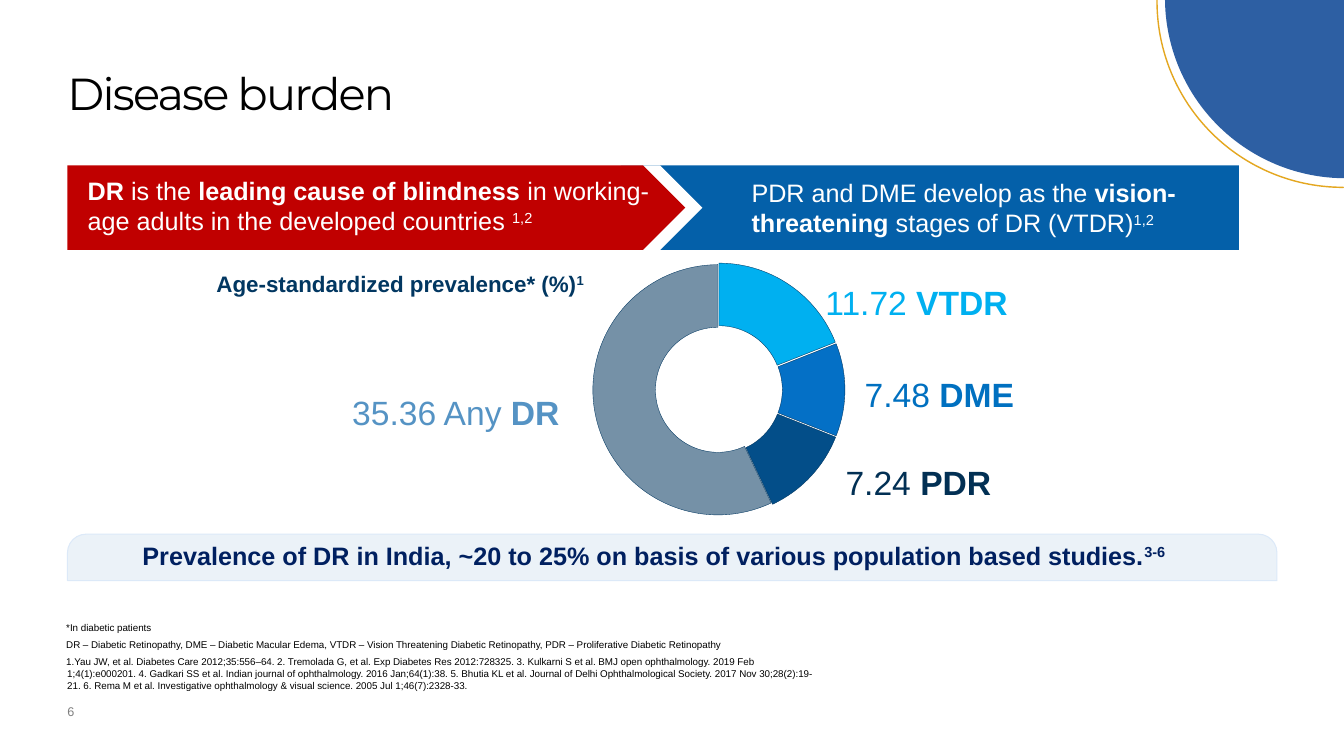
from lxml import etree
from pptx import Presentation
from pptx.chart.data import CategoryChartData
from pptx.dml.color import RGBColor
from pptx.enum.chart import XL_CHART_TYPE
from pptx.enum.shapes import MSO_SHAPE
from pptx.enum.text import MSO_ANCHOR, PP_ALIGN
from pptx.oxml import parse_xml
from pptx.oxml.ns import nsdecls, qn
from pptx.util import Cm, Pt

LEFT, CENTER, RIGHT = PP_ALIGN.LEFT, PP_ALIGN.CENTER, PP_ALIGN.RIGHT
TOP, MIDDLE = MSO_ANCHOR.TOP, MSO_ANCHOR.MIDDLE
PENTAGON, PIE, ARC = MSO_SHAPE.PENTAGON, MSO_SHAPE.PIE, MSO_SHAPE.BLOCK_ARC
PANEL = MSO_SHAPE.ROUND_2_SAME_RECTANGLE
DOUGHNUT = XL_CHART_TYPE.DOUGHNUT

PLAIN, BOLD, SUPER, BOLD_SUPER = (False, False), (True, False), (False, True), (True, True)

# kind, box, rotation, adjustments, fill, line, line width
SHAPES = [
    (PANEL, (1.7, 13.46, 30.48, 1.17), 180, (0, 0.4), "EBF2F8", "DCE9F8", 0.75),
    (PENTAGON, (15.65, 4.17, 15.57, 2.13), 0, (0,), "0460A9", None, 0),
    (PENTAGON, (2.13, 4.17, 15.57, 2.13), 0, (0.5,), "FFFFFF", None, 0),
    (PENTAGON, (1.7, 4.17, 15.57, 2.13), 0, (0.5,), "C00000", None, 0),
    (PIE, (29.36, -4.6, 9.09, 9.09), 270, (108.29, 162), "2D5FA3", None, 0),
    (ARC, (29.16, -4.65, 9.37, 9.37), 270, (107.95, 162.65, 0), None, "E4A720", 1),
]

TITLE = ((1.7, 0.51, 27.61, 3.81), 32, "000000", LEFT, [("Disease burden", PLAIN)])
PAGE_NUMBER = ((1.7, 17.75, 0.84, 1.09), 9, "7F7F7F", LEFT, [("6", PLAIN)])
SUMMARY = ((1.75, 13.23, 29.46, 1.52), 18, "002060", CENTER, [
    ("Prevalence of DR in India, ~20 to 25% on basis of various population based studies.", BOLD),
    ("3-6", BOLD_SUPER)])
REFERENCES = ((1.42, 16.41, 19.33, 1.14), 7, "000000", LEFT, [(
    "Yau JW, et al. Diabetes Care 2012;35:556–64. 2. Tremolada G, et al. Exp Diabetes Res "
    "2012:728325. 3. Kulkarni S et al. BMJ open ophthalmology. 2019 Feb 1;4(1):e000201. "
    "4. Gadkari SS et al. Indian journal of ophthalmology. 2016 Jan;64(1):38. 5. Bhutia KL "
    "et al. Journal of Delhi Ophthalmological Society. 2017 Nov 30;28(2):19-21. 6. Rema M "
    "et al. Investigative ophthalmology & visual science. 2005 Jul 1;46(7):2328-33.", PLAIN)])
LABELS = [
    ((1.96, 4.29, 14.71, 1.8), 18, "FFFFFF", LEFT, [
        ("DR ", BOLD), ("is the ", PLAIN), ("leading cause of blindness ", BOLD),
        ("in working-age adults in the developed countries ", PLAIN), ("1,2", SUPER)]),
    ((18.69, 4.34, 14.02, 1.8), 18, "FFFFFF", LEFT, [
        ("PDR and DME develop as the ", PLAIN), ("vision-threatening", BOLD),
        (" stages of DR (VTDR)", PLAIN), ("1,2", SUPER)]),
    ((1.42, 6.68, 13.54, 0.94), 16, "023761", RIGHT, [
        ("Age-standardized prevalence* (%)", BOLD), ("1", BOLD_SUPER)]),
    ((8.15, 9.75, 6.2, 1.27), 24, "5593C4", RIGHT, [("35.36 Any ", PLAIN), ("DR", BOLD)]),
    ((20.55, 6.99, 6.96, 1.27), 24, "00B0F0", LEFT, [("11.72 ", PLAIN), ("VTDR", BOLD)]),
    ((21.54, 9.3, 6.96, 1.27), 24, "0070C0", LEFT, [("7.48 ", PLAIN), ("DME", BOLD)]),
    ((21.06, 11.51, 6.96, 1.27), 24, "023054", LEFT, [("7.24 ", PLAIN), ("PDR", BOLD)]),
    ((1.42, 15.54, 30, 0.56), 7, "000000", LEFT, [("*In diabetic patients", PLAIN)]),
    ((1.42, 15.98, 24.28, 0.56), 7, "000000", LEFT, [
        ("DR – Diabetic Retinopathy, DME – Diabetic Macular Edema, VTDR – Vision Threatening "
         "Diabetic Retinopathy, PDR – Proliferative Diabetic Retinopathy", PLAIN)]),
]

CHART_BOX = (13.36, 6.32, 9.47, 7.01)
CATEGORIES = ["1", "2", "3", "", ""]
VALUES = [19, 12, 12, None, 57]
SLICE_COLORS = ["00B0F0", "0470C6", "034E89", "89AAC3", "7591A7"]
EXPLODED = 3
PLOT_LAYOUT = {"x": 0.167, "y": 0.05, "w": 0.666, "h": 0.9}


def color(hex_code):
    return RGBColor.from_string(hex_code)


def place(box):
    return [Cm(length) for length in box]


def add_shape(page, kind, box, rotation, adjustments, fill, line, width):
    shape = page.shapes.add_shape(kind, *place(box))
    shape.shadow.inherit = False
    shape.rotation = rotation
    for index, value in enumerate(adjustments):
        shape.adjustments[index] = value
    if fill:
        shape.fill.solid()
        shape.fill.fore_color.rgb = color(fill)
    else:
        shape.fill.background()
    if line:
        shape.line.color.rgb = color(line)
        shape.line.width = Pt(width)
    else:
        shape.line.fill.background()


def add_text(page, content, font="Arial", anchor=TOP, inset=True):
    box, size, hex_code, align, spans = content
    frame = page.shapes.add_textbox(*place(box)).text_frame
    frame.word_wrap = True
    frame.vertical_anchor = anchor
    if not inset:
        frame.margin_left = frame.margin_right = frame.margin_top = frame.margin_bottom = 0
    para = frame.paragraphs[0]
    para.alignment = align
    for text, (bold, raised) in spans:
        span = para.add_run()
        span.text = text
        span.font.name = font
        span.font.size = Pt(size)
        span.font.bold = bold
        span.font.color.rgb = color(hex_code)
        if raised:
            span._r.get_or_add_rPr().set("baseline", "30000")
    return para


def add_doughnut(page):
    data = CategoryChartData()
    data.categories = CATEGORIES
    data.add_series("Series 1", VALUES)
    chart = page.shapes.add_chart(DOUGHNUT, *place(CHART_BOX), data).chart
    chart.has_legend = False
    chart.has_title = False
    chart.font.name = "Arial"
    chart.font.size = Pt(10)
    chart.font.color.rgb = color("000000")
    plot = chart.plots[0]
    plot.vary_by_categories = False
    for index, hex_code in enumerate(SLICE_COLORS):
        point = plot.series[0].points[index]
        point.format.fill.solid()
        point.format.fill.fore_color.rgb = color(hex_code)
        point.format.line.color.rgb = color("023761")
        point.format.line.width = Pt(0.25)
    for slice_xml in plot.series[0]._element.findall(qn("c:dPt"))[:EXPLODED]:
        explosion = etree.Element(qn("c:explosion"), val="3")
        slice_xml.find(qn("c:spPr")).addprevious(explosion)
    plot._element.find(qn("c:holeSize")).set("val", "50")
    area = chart._chartSpace.chart.plotArea
    for old in area.findall(qn("c:layout")):
        area.remove(old)
    sizes = "".join(f'<c:{key} val="{value}"/>' for key, value in PLOT_LAYOUT.items())
    area.insert(0, parse_xml(
        f'<c:layout {nsdecls("c")}><c:manualLayout><c:layoutTarget val="inner"/>'
        f'<c:xMode val="edge"/><c:yMode val="edge"/>{sizes}</c:manualLayout></c:layout>'))


def main():
    deck = Presentation()
    deck.slide_width, deck.slide_height = Cm(33.87), Cm(19.05)
    page = deck.slides.add_slide(deck.slide_layouts[6])
    for shape in SHAPES:
        add_shape(page, *shape)
    add_doughnut(page)

    title = add_text(page, TITLE, "Montserrat", MIDDLE, inset=False)
    title.line_spacing = 0.9
    title.runs[0]._r.get_or_add_rPr().set("spc", "-130")
    add_text(page, PAGE_NUMBER, inset=False)
    add_text(page, SUMMARY, anchor=MIDDLE, inset=False)
    for label in LABELS:
        add_text(page, label)

    properties = add_text(page, REFERENCES)._p.get_or_add_pPr()
    properties.set("marL", "9144")
    properties.set("indent", "-9144")
    etree.SubElement(properties, qn("a:buFont"), typeface="+mj-lt")
    etree.SubElement(properties, qn("a:buAutoNum"), type="arabicPeriod")
    deck.save("out.pptx")


if __name__ == "__main__":
    main()
